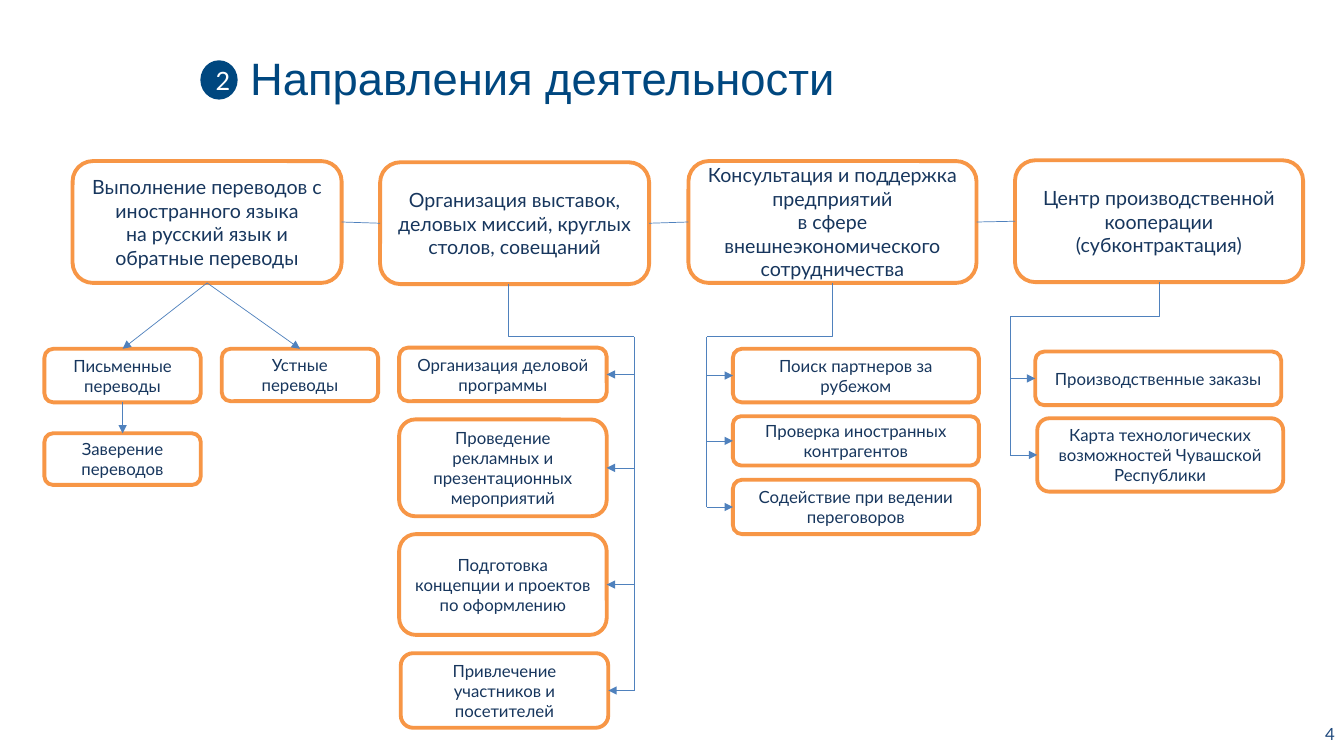
from lxml.etree import SubElement
from pptx import Presentation
from pptx.dml.color import RGBColor
from pptx.enum.shapes import MSO_CONNECTOR, MSO_SHAPE
from pptx.enum.text import MSO_ANCHOR, PP_ALIGN
from pptx.oxml.ns import qn
from pptx.util import Cm, Pt

TOP, LEFT, BOTTOM, RIGHT = range(4)


def rgb(value):
    return RGBColor.from_string(value)


class Deck:
    """Holds the style and the current slide."""
    NAVY, ORANGE, BLUE, WHITE = "00477F", "F79646", "4F81BD", "FFFFFF"
    TITLE = {"name": "Arial", "size": Pt(32.4), "color": NAVY}
    BADGE = {"name": "Lato", "size": Pt(18), "color": WHITE}
    HEADER = {"name": "Lato", "size": Pt(14), "color": "17365D"}
    ITEM = {**HEADER, "size": Pt(12)}
    NUMBER = {**ITEM, "color": "1F497D"}

    def __init__(self, prs):
        self.slide = prs.slides.add_slide(prs.slide_layouts[5])
        self.shapes = self.slide.shapes

    def set_text(self, sp, text, style, align=PP_ALIGN.CENTER):
        tf = sp.text_frame
        tf.text = text
        tf.word_wrap = True
        tf.vertical_anchor = MSO_ANCHOR.MIDDLE
        for p in tf.paragraphs:
            p.alignment = align
            for r in p.runs:
                for key, value in style.items():
                    if key == "color":
                        r.font.color.rgb = rgb(value)
                    else:
                        setattr(r.font, key, value)

    def title(self, text, *box):
        sp = self.shapes.title
        for key, value in zip(("left", "top", "width", "height"), box):
            setattr(sp, key, Cm(value))
        self.set_text(sp, text, self.TITLE, PP_ALIGN.LEFT)
        sp.text_frame.paragraphs[0].line_spacing = 0.89

    def shape(self, kind, fill, text, style, box):
        sp = self.shapes.add_shape(kind, *map(Cm, box))
        sp.shadow.inherit = False
        sp.fill.solid()
        sp.fill.fore_color.rgb = rgb(fill)
        self.set_text(sp, text, style)
        return sp

    def box(self, text, style, *box):
        sp = self.shape(MSO_SHAPE.ROUNDED_RECTANGLE, self.WHITE, text, style, box)
        sp.line.color.rgb = rgb(self.ORANGE)
        sp.line.width = Pt(2.75)
        return sp

    def badge(self, text, *box):
        sp = self.shape(MSO_SHAPE.OVAL, self.NAVY, text, self.BADGE, box)
        sp.line.fill.background()
        tf = sp.text_frame
        tf.word_wrap = False
        tf.margin_left, tf.margin_right = Cm(0.2), 0

    def number(self, text, *box):
        sp = self.shapes.add_textbox(*map(Cm, box))
        self.set_text(sp, text, self.NUMBER, PP_ALIGN.RIGHT)

    def line(self, x1=0, y1=0, x2=0, y2=0, start=None, end=None,
             arrow=False, kind=MSO_CONNECTOR.STRAIGHT):
        """Points are in EMU; start and end are (shape, side) pairs."""
        cn = self.shapes.add_connector(kind, x1, y1, x2, y2)
        if start:
            cn.begin_connect(*start)
        if end:
            cn.end_connect(*end)
        cn.line.color.rgb = rgb(self.BLUE)
        cn.line.width = Pt(0.5)
        props = cn._element.spPr
        if arrow:
            SubElement(props.find(qn("a:ln")), qn("a:tailEnd"), type="triangle")
        SubElement(props, qn("a:effectLst"))
        return cn

    def branch(self, header, start_x, trunk_x, bend_y, items, side):
        """Elbow out of the header, a vertical trunk, an arrow to every item."""
        x, bend = Cm(trunk_x), Cm(bend_y)
        elbow = self.line(Cm(start_x), header.top + header.height, x, bend,
                          kind=MSO_CONNECTOR.ELBOW)
        guides = elbow._element.spPr.find(qn("a:prstGeom")).get_or_add_avLst()
        SubElement(guides, qn("a:gd"), name="adj1", fmla="val 0")
        middles = [sp.top + sp.height // 2 for sp in items]
        self.line(x, bend, x, middles[-1])
        for sp, y in zip(items, middles):
            self.line(x, y, x, y, end=(sp, side), arrow=True)


def main():
    prs = Presentation()
    prs.slide_width, prs.slide_height = Cm(33.87), Cm(19.05)
    deck = Deck(prs)

    # Heading and page number
    deck.title("Направления деятельности", 6.05, 1.32, 26.67, 1.45)
    deck.badge("2", 5.05, 1.52, 0.94, 0.99)
    deck.number("4", 29.44, 17.93, 4.45, 1.12)

    # Four directions in a row
    headers = [deck.box(text, deck.HEADER, x, y, w, 3.07) for text, x, y, w in (
        ("Выполнение переводов с иностранного языка\n"
         "на русский язык и обратные переводы", 1.83, 4.06, 6.78),
        ("Организация выставок, деловых миссий, круглых столов, совещаний",
         9.58, 4.09, 6.78),
        ("Консультация и поддержка предприятий\n"
         "в сфере внешнеэкономического сотрудничества", 17.35, 4.06, 7.26),
        ("Центр производственной кооперации (субконтрактация)",
         25.58, 4.04, 7.26))]
    for a, b in zip(headers, headers[1:]):
        deck.line(start=(a, RIGHT), end=(b, LEFT))
    translation, events, consulting, center = headers

    # Translations
    written = deck.box("Письменные переводы", deck.ITEM, 1.12, 8.79, 3.94, 1.35)
    oral = deck.box("Устные\nпереводы", deck.ITEM, 5.59, 8.79, 3.94, 1.32)
    certified = deck.box("Заверение переводов", deck.ITEM, 1.12, 10.92, 3.94, 1.3)
    for a, b in ((translation, written), (translation, oral), (written, certified)):
        deck.line(start=(a, BOTTOM), end=(b, TOP), arrow=True)

    # Lists under the other directions
    lists = (
        (events, 12.8, 15.99, 8.48, RIGHT, 5.23, (
            ("Организация деловой программы", 10.06, 8.76, 1.35),
            ("Проведение рекламных и презентационных мероприятий",
             10.06, 10.57, 2.44),
            ("Подготовка концепции и проектов по оформлению", 10.06, 13.46, 2.54),
            ("Привлечение участников и посетителей", 10.1, 16.46, 1.88))),
        (consulting, 20.98, 17.81, 8.48, LEFT, 6.2, (
            ("Поиск партнеров за рубежом", 18.47, 8.79, 1.35),
            ("Проверка иностранных контрагентов", 18.47, 10.49, 1.24),
            ("Содействие при ведении переговоров", 18.47, 12.09, 1.37))),
        (center, 29.21, 25.45, 7.98, LEFT, 6.2, (
            ("Производственные заказы", 26.09, 8.86, 1.35),
            ("Карта технологических возможностей Чувашской Республики",
             26.14, 10.54, 1.85))))
    for header, start_x, trunk_x, bend_y, side, w, rows in lists:
        items = [deck.box(text, deck.ITEM, x, y, w, h) for text, x, y, h in rows]
        deck.branch(header, start_x, trunk_x, bend_y, items, side)

    prs.save("out.pptx")


if __name__ == "__main__":
    main()
